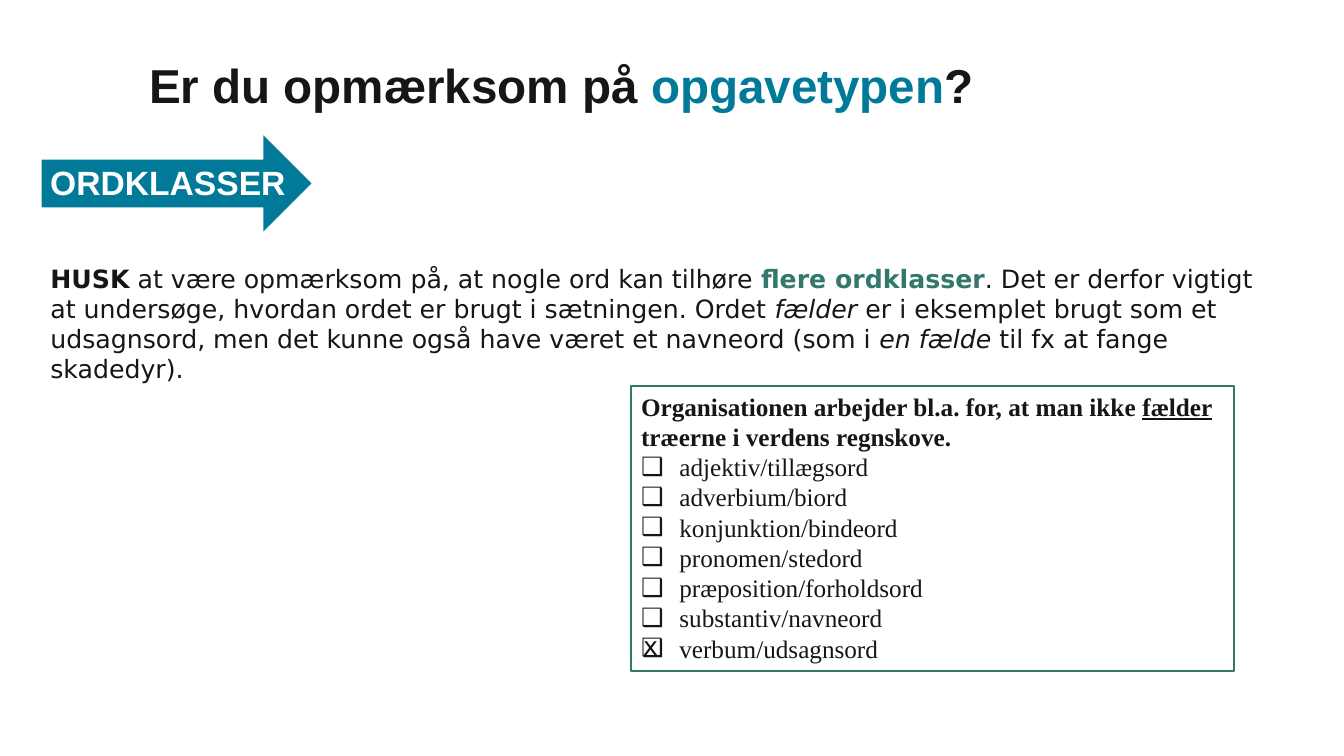
from lxml import etree
from pptx import Presentation
from pptx.dml.color import RGBColor
from pptx.enum import shapes, text
from pptx.oxml import ns
from pptx.util import Inches, Pt

INK = RGBColor(0x16, 0x16, 0x16)
BLUE = RGBColor(0x00, 0x7A, 0x98)
GREEN = RGBColor(0x33, 0x78, 0x6D)
WHITE = RGBColor(0xFF, 0xFF, 0xFF)

# Each run: text, then the formatting that differs from the paragraph's
TITLE = [("Er du opmærksom på", {}), (" opgavetypen", {"color": BLUE}), ("?", {})]
LABEL = [("ORDKLASSER", {})]
REMINDER = [
    ("HUSK", {"bold": True}),
    (" at være opmærksom på, at nogle ord kan tilhøre ", {}),
    ("flere ordklasser", {"bold": True, "color": GREEN}),
    (". Det er derfor vigtigt at undersøge, hvordan ordet er brugt i sætningen. Ordet ", {}),
    ("fælder ", {"italic": True}),
    ("er i eksemplet brugt som et udsagnsord, men det kunne også have været "
     "et navneord (som i ", {}),
    ("en fælde", {"italic": True}),
    (" til fx at fange skadedyr).", {}),
]
QUESTION = [
    [("Organisationen arbejder bl.a. for, at man ikke ", {}),
     ("fælder", {"underline": True}), (" ", {})],
    [("træerne i verdens regnskove.", {})],
]
WORD_CLASSES = [
    "adjektiv/tillægsord", "adverbium/biord", "konjunktion/bindeord",
    "pronomen/stedord", "præposition/forholdsord", "substantiv/navneord",
    "verbum/udsagnsord",
]
CHECK = [("x", {})]


def write(p, runs, font, size, color=INK, bold=False):
    p.alignment = text.PP_ALIGN.LEFT
    for words, extra in runs:
        r = p.add_run()
        r.text = words
        f = r.font
        f.name, f.size = font, Pt(size)
        f.bold = extra.get("bold", bold)
        f.italic = extra.get("italic")
        f.underline = extra.get("underline")
        f.color.rgb = extra.get("color", color)


def add_checkbox_bullet(p):
    pPr = p._p.get_or_add_pPr()
    pPr.set("marL", str(Inches(0.38)))
    pPr.set("indent", str(-Inches(0.38)))
    etree.SubElement(pPr, ns.qn("a:buFont")).set("typeface", "DejaVu Sans")
    etree.SubElement(pPr, ns.qn("a:buChar")).set("char", "❑")


def add_text(s, box, wrap=False):
    tf = s.shapes.add_textbox(*map(Inches, box)).text_frame
    tf.word_wrap = wrap
    return tf


prs = Presentation()
prs.slide_width, prs.slide_height = Inches(13.33), Inches(7.5)
s = prs.slides.add_slide(prs.slide_layouts[5])

title = s.shapes.title
title.left, title.top, title.width, title.height = map(Inches, (1.48, 0.65, 10.54, 0.37))
tf = title.text_frame
tf.margin_left = tf.margin_right = tf.margin_top = tf.margin_bottom = 0
tf.vertical_anchor = text.MSO_ANCHOR.TOP
tf.auto_size = text.MSO_AUTO_SIZE.NONE
tf.paragraphs[0].line_spacing = 0.83
write(tf.paragraphs[0], TITLE, "Arial", 34, bold=True)

arrow = s.shapes.add_shape(shapes.MSO_SHAPE.RIGHT_ARROW,
                           *map(Inches, (0.42, 1.36, 2.66, 0.92)))
arrow.shadow.inherit = False
arrow.fill.solid()
arrow.fill.fore_color.rgb = BLUE
arrow.line.color.rgb = BLUE
arrow.line.width = Pt(1)
etree.SubElement(arrow.line._get_or_add_ln(), ns.qn("a:miter")).set("lim", "800000")
tf = add_text(s, (0.4, 1.56, 2.56, 0.5))
write(tf.paragraphs[0], LABEL, "Arial", 24, WHITE, True)

tf = add_text(s, (0.37, 2.54, 12.43, 1.4), wrap=True)
tf.margin_left = tf.margin_right = Inches(0.13)
tf.margin_top = tf.margin_bottom = Inches(0.07)
write(tf.paragraphs[0], REMINDER, "DejaVu Sans", 18)

card = s.shapes.add_shape(shapes.MSO_SHAPE.RECTANGLE,
                          *map(Inches, (6.26, 3.83, 5.98, 2.83)))
card.shadow.inherit = False
card.fill.background()
card.line.color.rgb = GREEN
card.line.width = Pt(1.5)
tf = card.text_frame
tf.word_wrap = False
tf.vertical_anchor = text.MSO_ANCHOR.TOP
for i, runs in enumerate(QUESTION):
    p = tf.add_paragraph() if i else tf.paragraphs[0]
    write(p, runs, "Times New Roman", 18, bold=True)
for name in WORD_CLASSES:
    p = tf.add_paragraph()
    add_checkbox_bullet(p)
    write(p, [(name, {})], "Times New Roman", 18)

tf = add_text(s, (6.28, 6.2, 0.44, 0.4))
write(tf.paragraphs[0], CHECK, "DejaVu Sans", 18)

prs.save("out.pptx")
